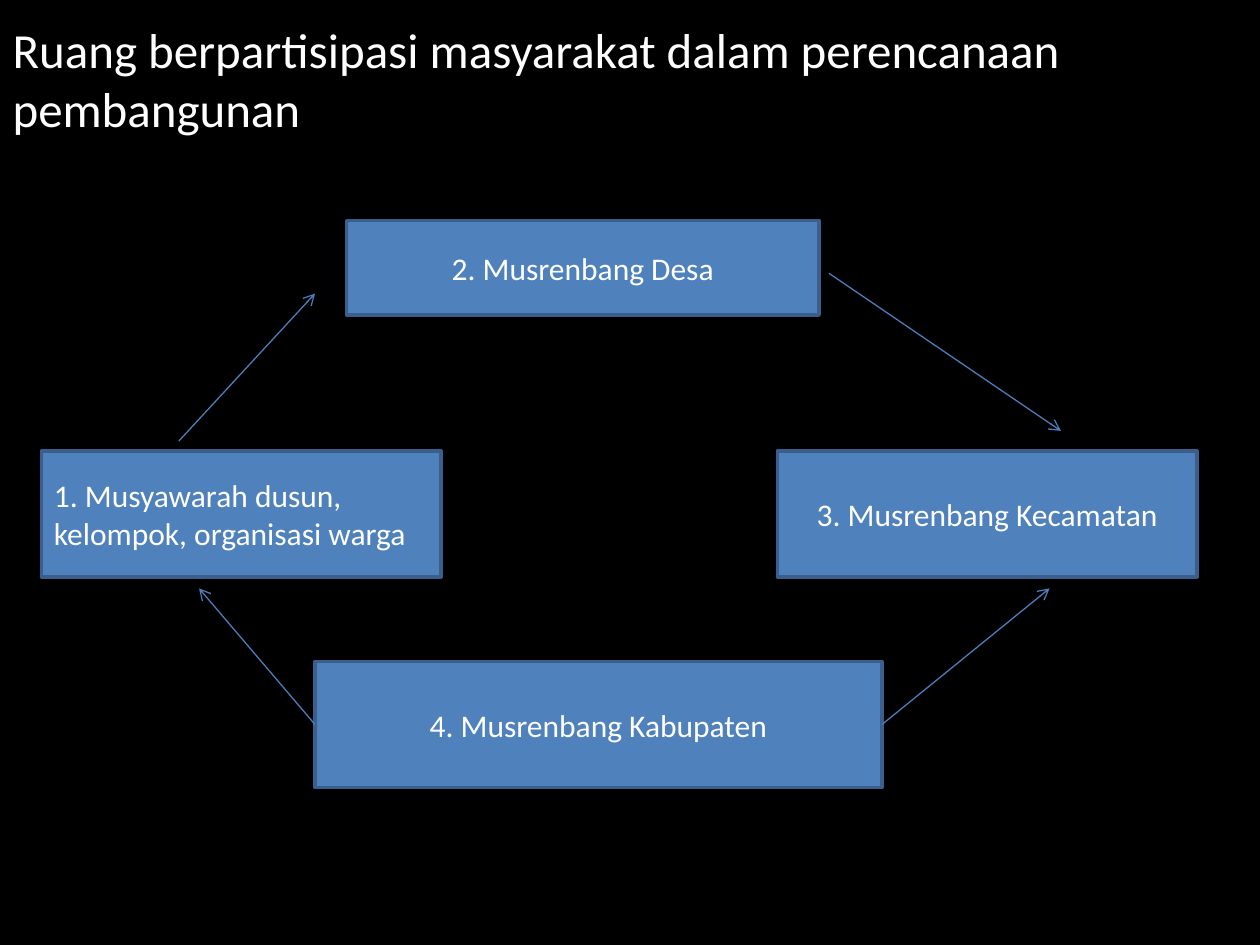
from dataclasses import dataclass

from lxml import etree
from pptx import Presentation
from pptx.dml.color import RGBColor
from pptx.enum import shapes, text
from pptx.oxml import ns
from pptx.util import Inches, Pt

LEFT, CENTER = text.PP_ALIGN.LEFT, text.PP_ALIGN.CENTER


@dataclass(frozen=True)
class Theme:
    background: RGBColor = RGBColor(0, 0, 0)
    text: RGBColor = RGBColor(255, 255, 255)
    box: RGBColor = RGBColor.from_string("4F81BD")
    border: RGBColor = RGBColor.from_string("3A5F8C")
    arrow: RGBColor = RGBColor.from_string("4B7EBC")
    font: str = "Calibri"
    title_size: Pt = Pt(28)
    box_size: Pt = Pt(18)
    border_width: Pt = Pt(2)
    arrow_width: Pt = Pt(0.75)


THEME = Theme()

# label, alignment, (left, top, width, height)
STAGES = [
    ("2. Musrenbang Desa", CENTER, (2.75, 1.75, 3.75, 0.75)),
    ("1. Musyawarah dusun, kelompok, organisasi warga", LEFT, (0.33, 3.58, 3.17, 1)),
    ("3. Musrenbang Kecamatan", CENTER, (6.17, 3.58, 3.33, 1)),
    ("4. Musrenbang Kabupaten", CENTER, (2.5, 5.25, 4.5, 1)),
]
# start x, start y, end x, end y
ARROWS = [
    (1.42, 3.5, 2.5, 2.33),
    (6.58, 2.17, 8.42, 3.42),
    (2.5, 5.75, 1.58, 4.67),
    (7, 5.75, 8.33, 4.67),
]


def write_text(shape, words, size, alignment):
    frame = shape.text_frame
    frame.word_wrap = True
    frame.auto_size = text.MSO_AUTO_SIZE.NONE
    frame.vertical_anchor = text.MSO_ANCHOR.MIDDLE
    paragraph = frame.paragraphs[0]
    paragraph.alignment = alignment
    run = paragraph.add_run()
    run.text = words
    font_format = {"name": THEME.font, "size": size, "bold": False}
    for name, value in font_format.items():
        setattr(run.font, name, value)
    run.font.color.rgb = THEME.text


def add_title(slide, box):
    title = slide.shapes.title
    for name, value in zip(("left", "top", "width", "height"), box):
        setattr(title, name, Inches(value))
    write_text(title, "Ruang berpartisipasi masyarakat dalam perencanaan pembangunan",
               THEME.title_size, LEFT)


def add_stage(slide, label, alignment, box):
    shape = slide.shapes.add_shape(shapes.MSO_SHAPE.RECTANGLE, *map(Inches, box))
    shape.shadow.inherit = False
    shape.fill.solid()
    shape.fill.fore_color.rgb = THEME.box
    shape.line.color.rgb = THEME.border
    shape.line.width = THEME.border_width
    write_text(shape, label, THEME.box_size, alignment)


def add_arrow(slide, ends):
    arrow = slide.shapes.add_connector(shapes.MSO_CONNECTOR.STRAIGHT, *map(Inches, ends))
    arrow.line.color.rgb = THEME.arrow
    arrow.line.width = THEME.arrow_width
    properties = arrow.element.spPr
    line = properties.find(ns.qn("a:ln"))
    etree.SubElement(line, ns.qn("a:tailEnd"), type="arrow")
    etree.SubElement(properties, ns.qn("a:effectLst"))


def add_planning_cycle(slide):
    for stage in STAGES:
        add_stage(slide, *stage)
    for ends in ARROWS:
        add_arrow(slide, ends)


def main():
    presentation = Presentation()
    presentation.slide_width, presentation.slide_height = Inches(10), Inches(7.5)
    slide = presentation.slides.add_slide(presentation.slide_layouts.get_by_name("Title Only"))
    slide.background.fill.solid()
    slide.background.fill.fore_color.rgb = THEME.background
    add_title(slide, (0, 0, 10, 1.25))
    add_planning_cycle(slide)
    presentation.save("out.pptx")


if __name__ == "__main__":
    main()
